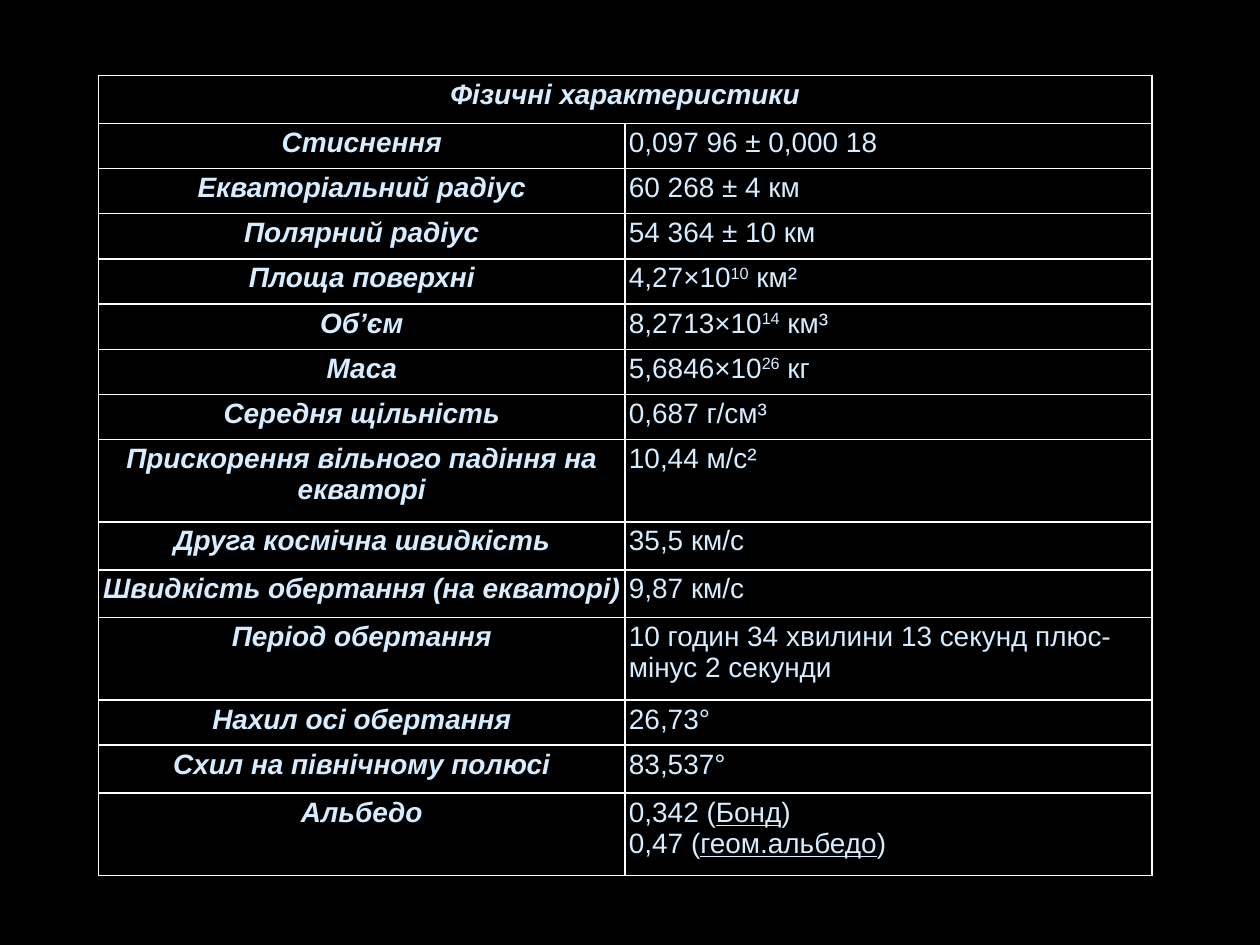
import pptx
import pptx.dml.color
import pptx.enum.text
import pptx.oxml
import pptx.oxml.ns
import pptx.util

Pt = pptx.util.Pt
RGBColor = pptx.dml.color.RGBColor
ALIGN = pptx.enum.text.PP_ALIGN

BLACK = RGBColor(0x00, 0x00, 0x00)
WHITE = RGBColor(0xFF, 0xFF, 0xFF)
PALE_BLUE = RGBColor(0xD6, 0xEC, 0xFF)

HEADING = "Фізичні характеристики"
SINGLE, LOOSE, DOUBLE = 25.85, 27.4, 47  # row heights
LABEL_FORMAT = {"bold": True, "italic": True}
VALUE_FORMAT = {"bold": False, "italic": False}
RAISED = "raised"
UNDERLINED = "underlined"
BREAK = "\n"

# Row height, label, and the value as pieces of text with an optional style
PROPERTIES = [
    (SINGLE, "Стиснення", [("0,097 96 ± 0,000 18", None)]),
    (SINGLE, "Екваторіальний радіус", [("60 268 ± 4 км", None)]),
    (SINGLE, "Полярний радіус", [("54 364 ± 10 км", None)]),
    (SINGLE, "Площа поверхні", [("4,27×10", None), ("10", RAISED), (" км²", None)]),
    (SINGLE, "Об’єм", [("8,2713×10", None), ("14", RAISED), (" км³", None)]),
    (SINGLE, "Маса", [("5,6846×10", None), ("26", RAISED), (" кг", None)]),
    (SINGLE, "Середня щільність", [("0,687 г/см³", None)]),
    (DOUBLE, "Прискорення вільного падіння на екваторі", [("10,44 м/с²", None)]),
    (LOOSE, "Друга космічна швидкість", [("35,5 км/с", None)]),
    (LOOSE, "Швидкість обертання (на екваторі)", [("9,87 км/c", None)]),
    (DOUBLE, "Період обертання",
     [("10 годин 34 хвилини 13 секунд плюс-мінус 2 секунди", None)]),
    (SINGLE, "Нахил осі обертання", [("26,73°", None)]),
    (LOOSE, "Схил на північному полюсі", [("83,537°", None)]),
    (DOUBLE, "Альбедо",
     [("0,342 (", None), ("Бонд", UNDERLINED), (")", None), (BREAK, None),
      ("0,47 (", None), ("геом.альбедо", UNDERLINED), (")", None)]),
]


def write_cell(cell, pieces, alignment, font_format):
    para = cell.text_frame.paragraphs[0]
    para.alignment = alignment
    para.space_after = Pt(6)
    for text, style in pieces:
        if text == BREAK:
            para.add_line_break()
            continue
        span = para.add_run()
        span.text = text
        values = {"name": "Arial", "size": Pt(16), **font_format}
        if style == UNDERLINED:
            values["underline"] = True
        for name, value in values.items():
            setattr(span.font, name, value)
        span.font.color.rgb = PALE_BLUE
        if style == RAISED:
            span.font._element.set("baseline", "30000")


def style_cell(cell):
    margins = {"margin_left": 2.2, "margin_right": 2.2,
               "margin_top": 2.2, "margin_bottom": 2.2}
    for name, value in margins.items():
        setattr(cell, name, Pt(value))
    cell.fill.background()
    properties = cell._tc.get_or_add_tcPr()
    for position, side in enumerate(("lnL", "lnR", "lnT", "lnB")):
        border = pptx.oxml.parse_xml(
            f'<a:{side} {pptx.oxml.ns.nsdecls("a")} w="{Pt(1)}"><a:solidFill>'
            f'<a:srgbClr val="{WHITE}"/></a:solidFill></a:{side}>')
        properties.insert(position, border)


# Page
deck = pptx.Presentation()
deck.slide_width, deck.slide_height = Pt(720), Pt(540)
page = deck.slides.add_slide(deck.slide_layouts[6])
page.background.fill.solid()
page.background.fill.fore_color.rgb = BLACK

# Table grid
heights = [LOOSE] + [height for height, label, value in PROPERTIES]
frame = page.shapes.add_table(len(heights), 2, Pt(56.25), Pt(43.1),
                              Pt(602), Pt(sum(heights)))
table = frame.table
table.first_row = table.horz_banding = False
for column in table.columns:
    column.width = Pt(301)
for row, height in zip(table.rows, heights):
    row.height = Pt(height)
for cell in table.iter_cells():
    style_cell(cell)

# Heading across both columns
table.cell(0, 0).merge(table.cell(0, 1))
write_cell(table.cell(0, 0), [(HEADING, None)], ALIGN.CENTER, LABEL_FORMAT)

# Labels and values
for index, (height, label, value) in enumerate(PROPERTIES, start=1):
    write_cell(table.cell(index, 0), [(label, None)], ALIGN.CENTER, LABEL_FORMAT)
    write_cell(table.cell(index, 1), value, ALIGN.LEFT, VALUE_FORMAT)

deck.save("out.pptx")
